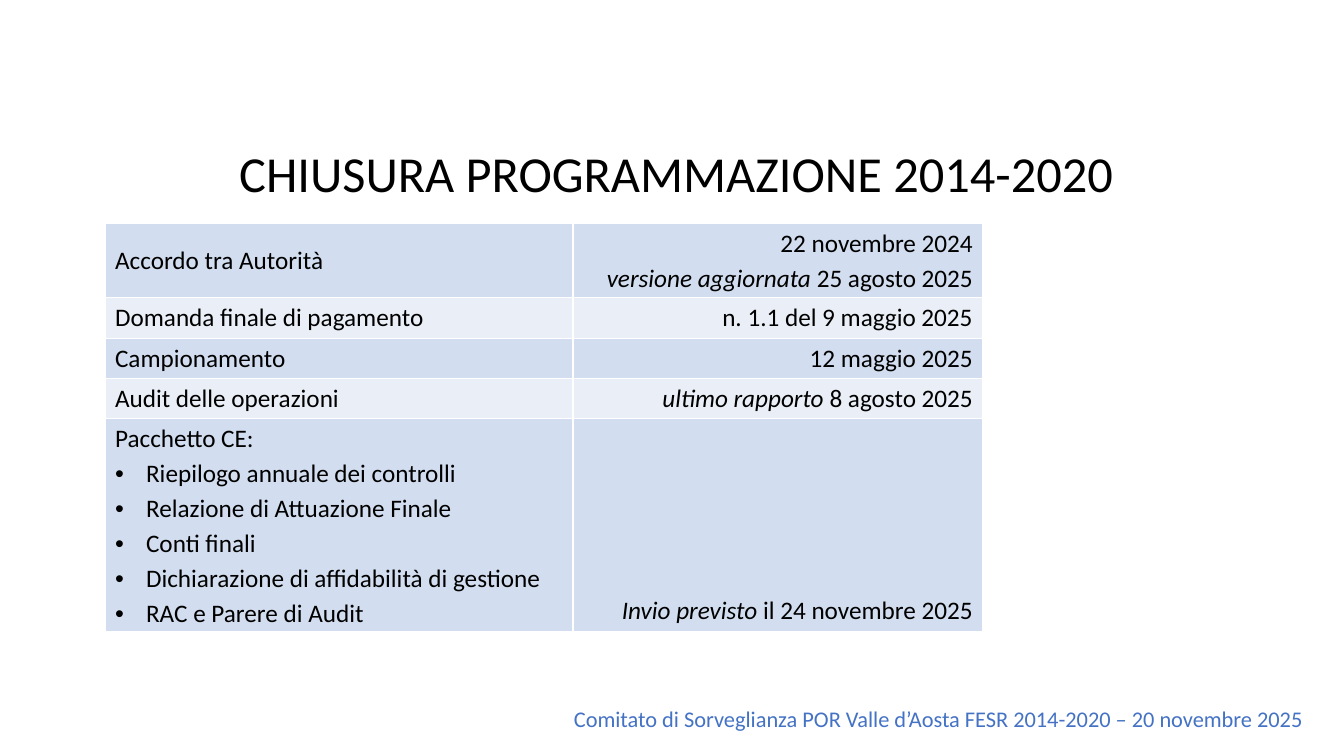
from lxml import etree
from pptx import Presentation
from pptx import util as u
from pptx.dml.color import RGBColor
from pptx.enum import text
from pptx.oxml import ns

EMU_PER_INCH = 914400
PX = EMU_PER_INCH / 100.8
COLOURS = {"ink": "000000", "footer": "4472C4", "border": "FFFFFF",
           "dark band": "D2DEEF", "light band": "EAEFF7"}
LEFT, CENTER, RIGHT = text.PP_ALIGN.LEFT, text.PP_ALIGN.CENTER, text.PP_ALIGN.RIGHT
MIDDLE, TOP, BOTTOM = text.MSO_ANCHOR.MIDDLE, text.MSO_ANCHOR.TOP, text.MSO_ANCHOR.BOTTOM


def px(*lengths):
    return [u.Emu(round(length * PX)) for length in lengths]


def write(frame, lines, size=18, colour="ink", align=LEFT, after=None, bulleted=False):
    for index, line in enumerate(lines):
        paragraph = frame.add_paragraph() if index else frame.paragraphs[0]
        paragraph.alignment = align
        if after is not None:
            paragraph.space_after = u.Pt(after)
        if bulleted and index:
            properties = paragraph._p.get_or_add_pPr()
            indent = px(31)[0]
            properties.set("marL", str(indent))
            properties.set("indent", str(-indent))
            etree.SubElement(properties, ns.qn("a:buFont"), typeface="Arial")
            etree.SubElement(properties, ns.qn("a:buChar"), char="•")
        emphasis, plain = line if isinstance(line, tuple) else ("", line)
        for words, italic in ((emphasis, True), (plain, False)):
            if words:
                run = paragraph.add_run()
                run.text = words
                run.font.name = "Calibri"
                run.font.size = u.Pt(size)
                run.font.italic = italic
                run.font.bold = False
                run.font.color.rgb = RGBColor.from_string(COLOURS[colour])


deck = Presentation()
deck.slide_width, deck.slide_height = px(1344, 756)
slide = deck.slides.add_slide(deck.slide_layouts[5])

title = slide.shapes.title
title.left, title.top, title.width, title.height = px(105, 137, 1143, 72)
title.text_frame.word_wrap = True
title.text_frame.auto_size = text.MSO_AUTO_SIZE.SHAPE_TO_FIT_TEXT
title.text_frame.vertical_anchor = TOP
write(title.text_frame, ["CHIUSURA PROGRAMMAZIONE 2014-2020"], size=36, align=CENTER)

milestones = [
    (74, ["Accordo tra Autorità"],
     ["22 novembre 2024", ("versione aggiornata ", "25 agosto 2025")], TOP),
    (40, ["Domanda finale di pagamento"], ["n. 1.1 del 9 maggio 2025"], TOP),
    (40, ["Campionamento"], ["12 maggio 2025"], TOP),
    (40, ["Audit delle operazioni"], [("ultimo rapporto", " 8 agosto 2025")], TOP),
    (212, ["Pacchetto CE:", "Riepilogo annuale dei controlli",
           "Relazione di Attuazione Finale", "Conti finali",
           "Dichiarazione di affidabilità di gestione", "RAC e Parere di Audit"],
     [("Invio previsto", " il 24 novembre 2025")], BOTTOM),
]
total_height = sum(milestone[0] for milestone in milestones)
schedule = slide.shapes.add_table(len(milestones), 2, *px(105, 223, 878, total_height)).table
schedule.first_row = False
schedule.horz_banding = False
for column, width in zip(schedule.columns, px(468, 410)):
    column.width = width

for index, (height, activity, dates, date_anchor) in enumerate(milestones):
    schedule.rows[index].height = px(height)[0]
    band = "light band" if index % 2 else "dark band"
    entries = [(activity, LEFT, MIDDLE), (dates, RIGHT, date_anchor)]
    for cell, (lines, align, anchor) in zip(schedule.rows[index].cells, entries):
        cell.vertical_anchor = anchor
        cell_properties = cell._tc.get_or_add_tcPr()
        for side in ("lnL", "lnR", "lnT", "lnB"):
            border = etree.SubElement(cell_properties, ns.qn("a:" + side), w=str(u.Pt(1)))
            border_fill = etree.SubElement(border, ns.qn("a:solidFill"))
            etree.SubElement(border_fill, ns.qn("a:srgbClr"), val=COLOURS["border"])
        cell.fill.solid()
        cell.fill.fore_color.rgb = RGBColor.from_string(COLOURS[band])
        write(cell.text_frame, lines, align=align, after=3, bulleted=align == LEFT)

footer = slide.shapes.add_textbox(*px(564, 700, 760, 37)).text_frame
footer.word_wrap = True
footer.auto_size = text.MSO_AUTO_SIZE.SHAPE_TO_FIT_TEXT
write(footer, ["Comitato di Sorveglianza POR Valle d’Aosta FESR 2014-2020 – 20 novembre 2025"],
      size=16, colour="footer")

deck.save("out.pptx")
